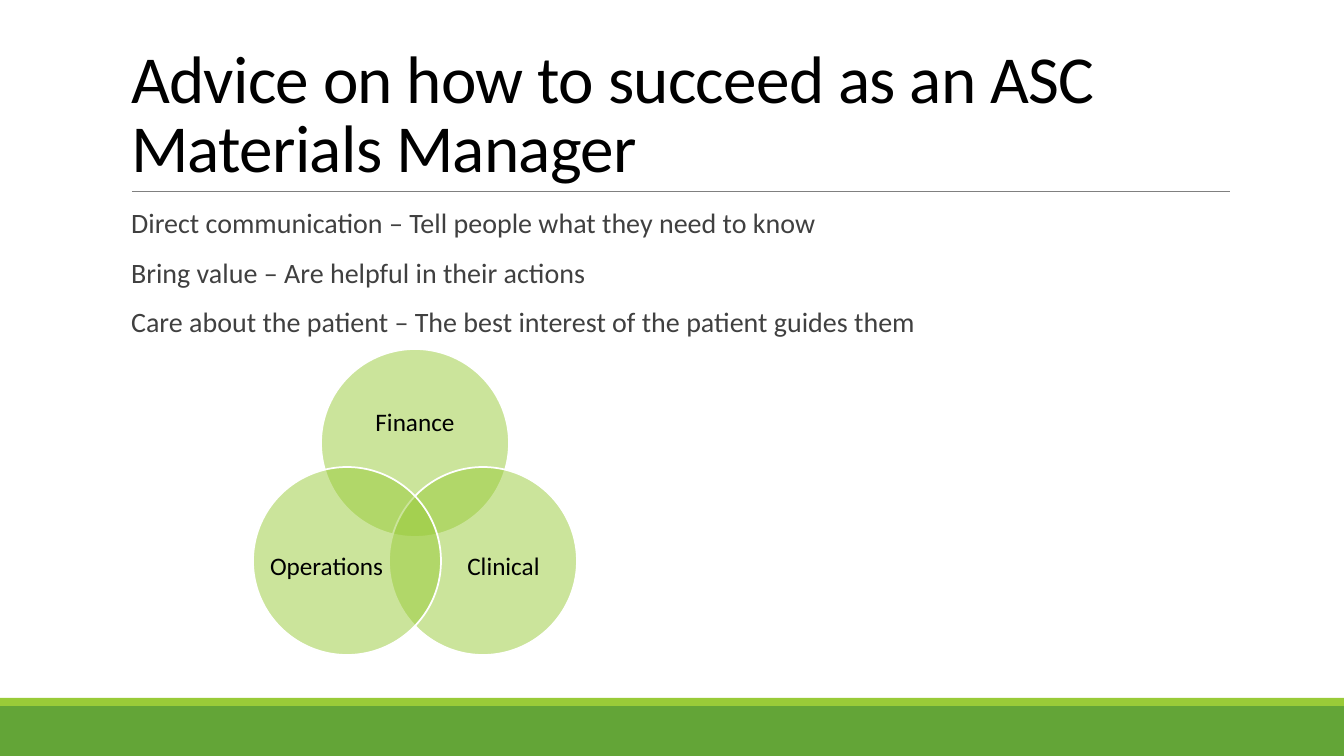
from lxml.etree import SubElement
from pptx import Presentation
from pptx.dml.color import RGBColor
from pptx.enum.shapes import MSO_CONNECTOR as Connector, MSO_SHAPE as Shape
from pptx.enum.text import MSO_ANCHOR as Anchor, MSO_AUTO_SIZE as AutoSize, PP_ALIGN as Align
from pptx.oxml.ns import qn
from pptx.util import Emu, Pt

EMU_PER_PX = 914400 / 100.8
COLORS = {
    "green": "63A537",
    "lime": "99CB38",
    "rule": "808080",
    "title": "000000",
    "body": "404040",
    "white": "FFFFFF",
}
FONT = "Calibri"


def px(length):
    return Emu(round(length * EMU_PER_PX))


def rgb(name):
    return RGBColor.from_string(COLORS[name])


class SlideBuilder:
    def __init__(self, page):
        self.page = page

    def add_span(self, para, text, size, color):
        span = para.add_run()
        span.text = text
        span.font.name = FONT
        span.font.size = Pt(size)
        span.font.color.rgb = rgb(color)
        return span

    def place(self, box, left, top, width, height):
        box.left, box.top, box.width, box.height = map(px, (left, top, width, height))

    def band(self, top, height, color):
        bar = self.page.shapes.add_shape(Shape.RECTANGLE, 0, px(top), px(1344), px(height))
        bar.shadow.inherit = False
        bar.fill.solid()
        bar.fill.fore_color.rgb = rgb(color)
        bar.line.fill.background()

    def rule(self, left, right, y):
        line = self.page.shapes.add_connector(
            Connector.STRAIGHT, px(left), px(y), px(right), px(y))
        line.line.color.rgb = rgb("rule")
        line.line.width = Pt(0.5)
        SubElement(line._element.spPr, qn("a:effectLst"))

    def title(self, text, *bounds):
        box = self.page.shapes.title
        self.place(box, *bounds)
        frame = box.text_frame
        frame.auto_size = AutoSize.NONE
        frame.vertical_anchor = Anchor.BOTTOM
        para = frame.paragraphs[0]
        para.alignment = Align.LEFT
        para.line_spacing = 0.85
        span = self.add_span(para, text, 48, "title")
        span.font._element.set("spc", "-50")

    def body(self, lines, *bounds):
        box = self.page.placeholders[1]
        self.place(box, *bounds)
        frame = box.text_frame
        frame.auto_size = AutoSize.NONE
        frame.margin_left = frame.margin_right = 0
        for index, text in enumerate(lines):
            para = frame.add_paragraph() if index else frame.paragraphs[0]
            para.line_spacing = 0.9
            para.space_before, para.space_after = Pt(12), Pt(2)
            self.blank_bullet(para)
            self.add_span(para, text, 20, "body")

    def blank_bullet(self, para):
        """Hang the paragraph on a space used as its bullet."""
        props = para._p.get_or_add_pPr()
        props.set("marL", "91440")
        props.set("indent", "-91440")
        color = SubElement(props, qn("a:buClr"))
        SubElement(color, qn("a:srgbClr"), val=COLORS["lime"])
        SubElement(props, qn("a:buFont"), typeface=FONT)
        SubElement(props, qn("a:buChar"), char=" ")

    def circle(self, left, top, size):
        disc = self.page.shapes.add_shape(Shape.OVAL, px(left), px(top), px(size), px(size))
        disc.shadow.inherit = False
        disc.fill.solid()
        disc.fill.fore_color.rgb = rgb("lime")
        fill_color = disc._element.spPr.find(qn("a:solidFill")).find(qn("a:srgbClr"))
        SubElement(fill_color, qn("a:alpha"), val="50000")
        disc.line.color.rgb = rgb("white")
        disc.line.width = Pt(1.25)

    def label(self, text, *bounds):
        box = self.page.shapes.add_textbox(*map(px, bounds))
        frame = box.text_frame
        frame.word_wrap = True
        frame.vertical_anchor = Anchor.MIDDLE
        frame.margin_left = frame.margin_right = frame.margin_top = frame.margin_bottom = 0
        para = frame.paragraphs[0]
        para.alignment = Align.CENTER
        para.line_spacing = 0.9
        self.add_span(para, text, 18, "title")


def main():
    deck = Presentation()
    deck.slide_width, deck.slide_height = px(1344), px(756)
    builder = SlideBuilder(deck.slides.add_slide(deck.slide_layouts[1]))

    builder.band(706, 50, "green")
    builder.band(698, 8, "lime")
    builder.rule(132, 1230, 191)
    builder.title("Advice on how to succeed as an ASC Materials Manager", 121, 31, 1109, 160)
    builder.body([
        "Direct communication – Tell people what they need to know",
        "Bring value – Are helpful in their actions",
        "Care about the patient – The best interest of the patient guides them",
    ], 121, 204, 1109, 488)

    venn_left, venn_top, diameter = 321, 349, 188
    shift, drop = 68, 118
    venn = [
        ("Finance", 0, 0, (346, 381, 138, 85)),
        ("Clinical", shift, drop, (447, 515, 113, 104)),
        ("Operations", -shift, drop, (270, 515, 113, 104)),
    ]
    for text, across, down, label_bounds in venn:
        builder.circle(venn_left + across, venn_top + down, diameter)
        builder.label(text, *label_bounds)

    deck.save("out.pptx")


if __name__ == "__main__":
    main()
